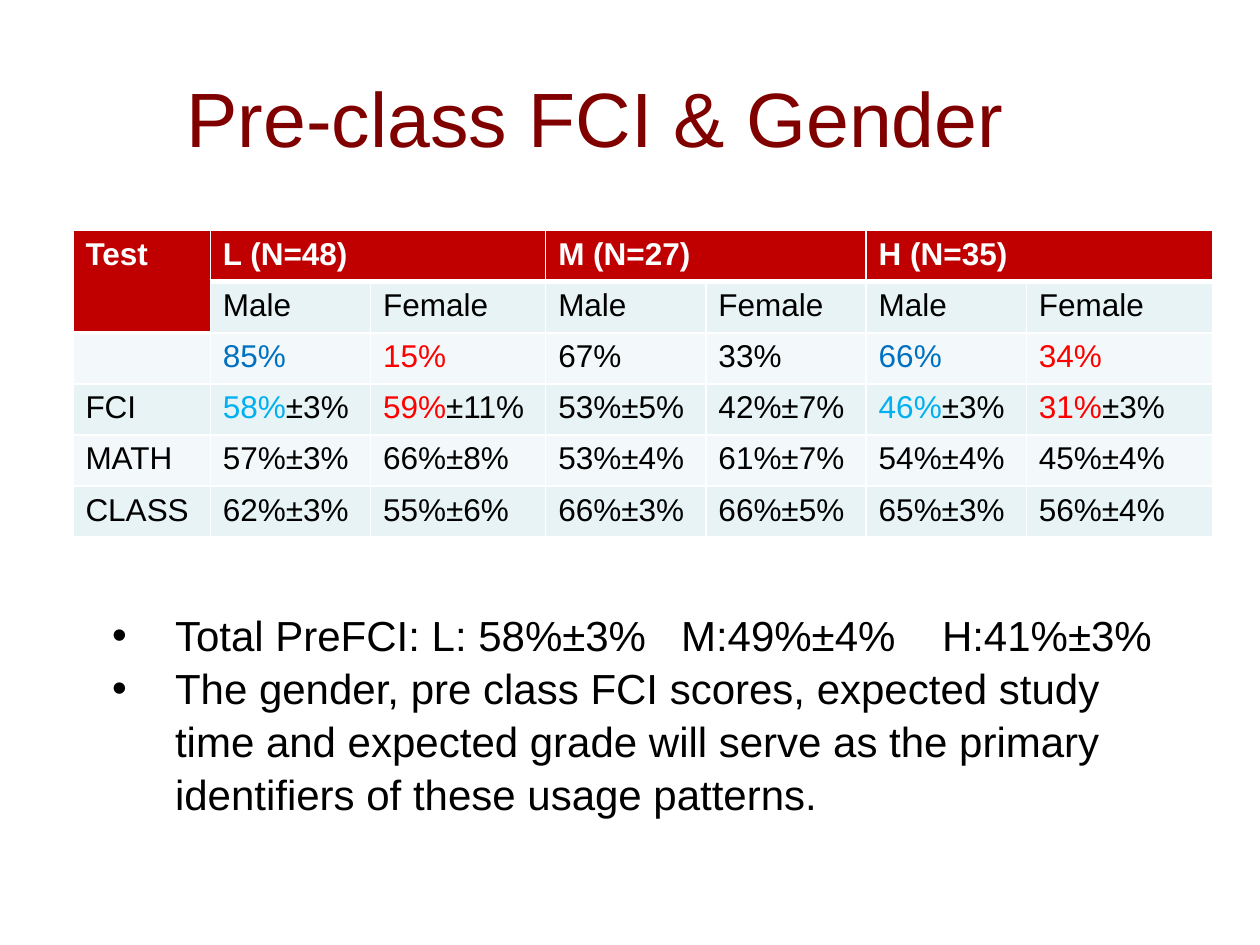
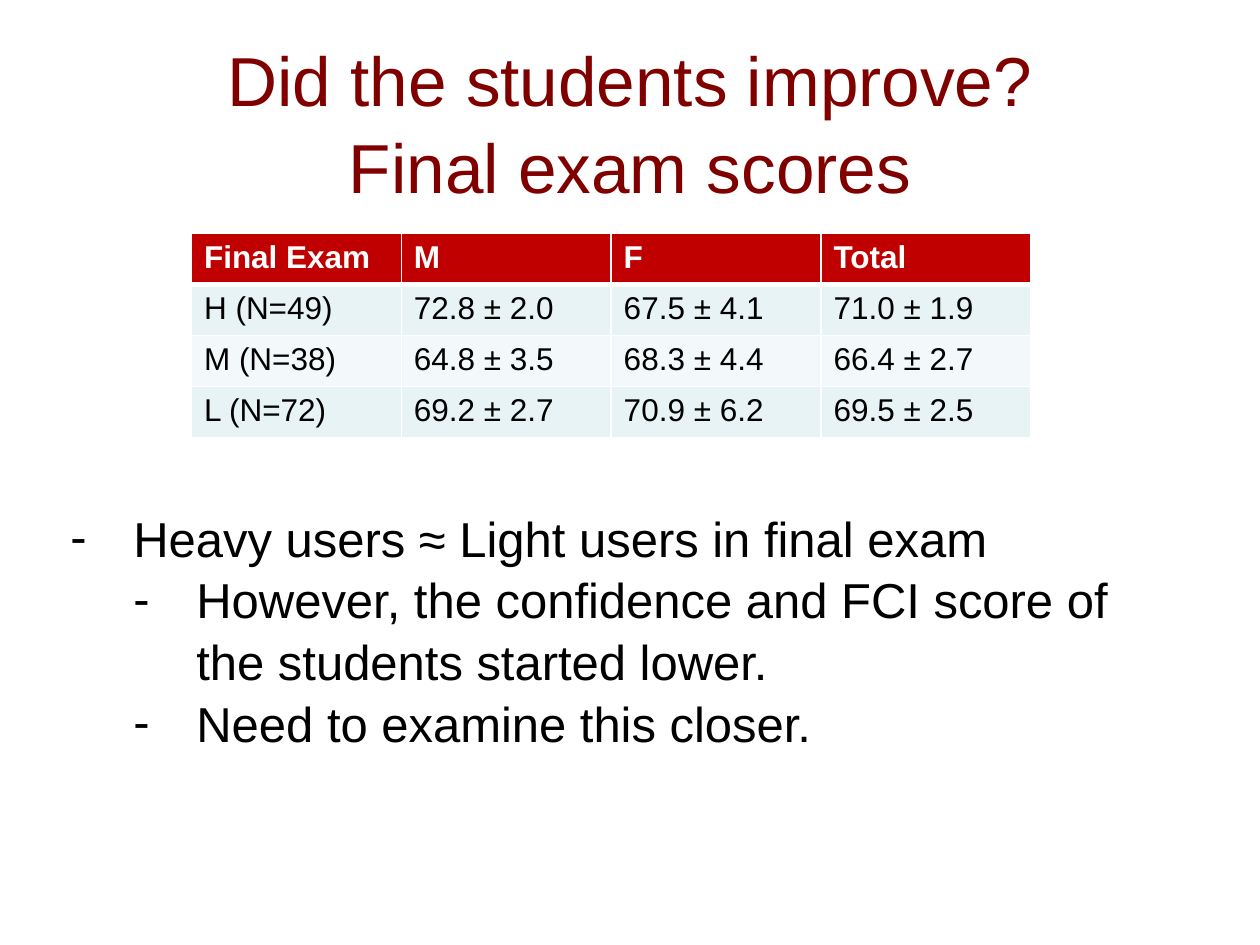
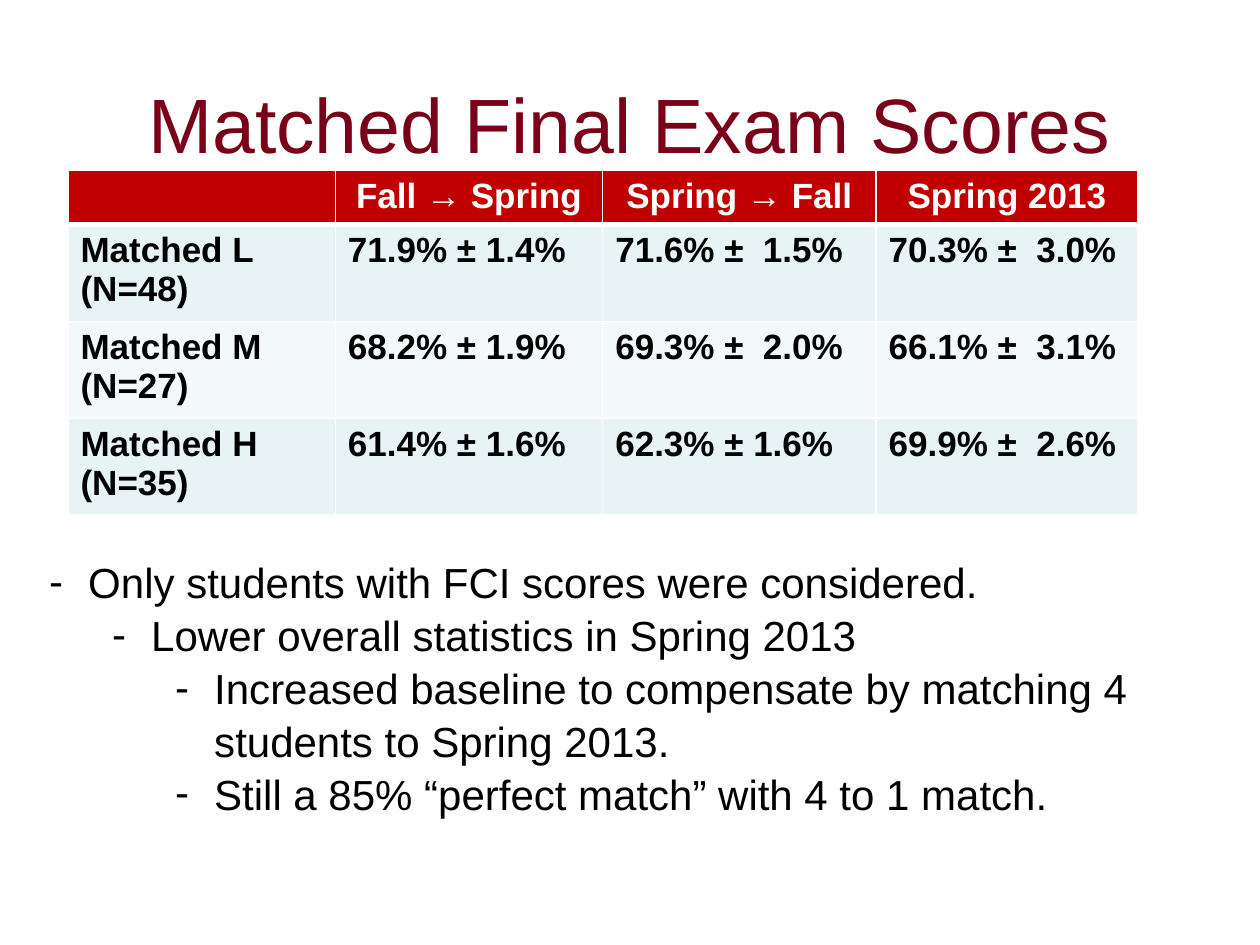
from lxml.etree import SubElement
from pptx import Presentation
from pptx.dml.color import RGBColor
from pptx.enum.text import MSO_ANCHOR, PP_ALIGN
from pptx.oxml.ns import qn
from pptx.util import Cm, Pt

FONT = "Arial"
BLACK, WHITE, MAROON = "000000", "FFFFFF", "800000"
HEADER_FILL = "C00000"
BAND_FILLS = ["F3F9FA", "E7F3F4"]
BLUE, LIGHT_BLUE, RED = "0070C0", "00B0F0", "FF0000"
LINE_SPACING = 1.05
HEADER_HEIGHT = 1.03
LEVEL_STEP = 1.27

# Boxes are (left, top, width, height) in centimetres.
TITLE_BOX = (1.9, 0.84, 21.6, 3.18)

SLIDES = [
    {
        "title": "Pre-class FCI & Gender",
        "title_box": (2.44, 0.71, 19.13, 3.18),
        "title_size": 44,
        "title_color": MAROON,
        "table_position": (1.47, 4.65),
        "columns": [2.77, 3.23, 3.53, 3.23, 3.23, 3.23, 3.76],
        "row_height": 1.03,
        "table_size": 18,
        "rows": [
            ["Test", "L (N=48)", "", "M (N=27)", "", "H (N=35)", ""],
            ["", "Male", "Female", "Male", "Female", "Male", "Female"],
            ["", "85%", "15%", "67%", "33%", "66%", "34%"],
            ["FCI", "58%±3%", "59%±11%", "53%±5%", "42%±7%", "46%±3%", "31%±3%"],
            ["MATH", "57%±3%", "66%±8%", "53%±4%", "61%±7%", "54%±4%", "45%±4%"],
            ["CLASS", "62%±3%", "55%±6%", "66%±3%", "66%±5%", "65%±3%", "56%±4%"],
        ],
        "merges": [((0, 0), (1, 0))] + [((0, c), (0, c + 1)) for c in (1, 3, 5)],
        "highlights": {
            (2, 1): BLUE, (2, 2): RED, (2, 5): BLUE, (2, 6): RED,
            (3, 1): LIGHT_BLUE, (3, 2): RED, (3, 5): LIGHT_BLUE, (3, 6): RED,
        },
        "bullet_box": (2.01, 12.12, 21.87, 4.37),
        "bullet_size": 24,
        "bullet_mark": "•",
        "hanging": 1.27,
        "bullets": [
            (0, "Total PreFCI: L: 58%±3%   M:49%±4%    H:41%±3%"),
            (0, "The gender, pre class FCI scores, expected study time and expected "
                "grade will serve as the primary identifiers of these usage patterns."),
        ],
    },
    {
        "title": "Did the students improve?\nFinal exam scores",
        "title_box": TITLE_BOX,
        "title_size": 39.6,
        "title_color": MAROON,
        "table_position": (3.86, 4.7),
        "columns": [4.23] * 4,
        "row_height": 1.03,
        "table_size": 18,
        "rows": [
            ["Final Exam", "M", "F", "Total"],
            ["H (N=49)", "72.8 ± 2.0", "67.5 ± 4.1", "71.0 ± 1.9"],
            ["M (N=38)", "64.8 ± 3.5", "68.3 ± 4.4", "66.4 ± 2.7"],
            ["L (N=72)", "69.2 ± 2.7", "70.9 ± 6.2", "69.5 ± 2.5"],
        ],
        "bullet_box": (1.17, 10.06, 21.79, 5.05),
        "bullet_size": 28,
        "bullet_mark": "-",
        "hanging": 1.27,
        "bullets": [
            (0, "Heavy users ≈ Light users in final exam"),
            (1, "However, the confidence and FCI score of the students started lower."),
            (1, "Need to examine this closer."),
        ],
    },
    {
        "title": "Matched Final Exam Scores",
        "title_box": TITLE_BOX,
        "title_size": 44,
        "title_color": "7A0019",
        "table_position": (1.37, 3.43),
        "columns": [5.39, 5.39, 5.51, 5.28],
        "row_height": 1.94,
        "table_size": 20,
        "bold_body": True,
        "header_alignment": PP_ALIGN.CENTER,
        "rows": [
            ["", "Fall → Spring", "Spring → Fall", "Spring 2013"],
            ["Matched L\n(N=48)", "71.9% ± 1.4%", "71.6% ±  1.5%", "70.3% ±  3.0%"],
            ["Matched M\n(N=27)", "68.2% ± 1.9%", "69.3% ±  2.0%", "66.1% ±  3.1%"],
            ["Matched H\n(N=35)", "61.4% ± 1.6%", "62.3% ± 1.6%", "69.9% ±  2.6%"],
        ],
        "bullet_box": (0.74, 11.05, 24.08, 5.38),
        "bullet_size": 24,
        "bullet_mark": "-",
        "hanging": 0.79,
        "bullets": [
            (0, "Only students with FCI scores were considered."),
            (1, "Lower overall statistics in Spring 2013"),
            (2, "Increased baseline to compensate by matching 4 students to Spring 2013."),
            (2, "Still a 85% “perfect match” with 4 to 1 match."),
        ],
    },
]


def format_runs(paragraph, size, color, bold=False):
    for run in paragraph.runs:
        run.font.name = FONT
        run.font.size = Pt(size)
        run.font.bold = bold
        run.font.color.rgb = RGBColor.from_string(color)


def add_cell_border(cell, side, width):
    line = SubElement(cell._tc.get_or_add_tcPr(), qn(f"a:ln{side}"), w=str(Pt(width)))
    fill = SubElement(line, qn("a:solidFill"))
    SubElement(fill, qn("a:srgbClr"), val=WHITE)


presentation = Presentation()
presentation.slide_width = Cm(25.4)
presentation.slide_height = Cm(19.05)

for content in SLIDES:
    slide = presentation.slides.add_slide(presentation.slide_layouts[6])

    # Title
    title = slide.shapes.add_textbox(*map(Cm, content["title_box"])).text_frame
    title.word_wrap = True
    title.vertical_anchor = MSO_ANCHOR.MIDDLE
    paragraph = title.paragraphs[0]
    paragraph.text = content["title"]
    paragraph.alignment = PP_ALIGN.CENTER
    paragraph.line_spacing = LINE_SPACING
    format_runs(paragraph, content["title_size"], content["title_color"])

    # Score table
    rows, columns = content["rows"], content["columns"]
    heights = [HEADER_HEIGHT] + [content["row_height"]] * (len(rows) - 1)
    left, top = content["table_position"]
    table = slide.shapes.add_table(
        len(rows), len(columns), Cm(left), Cm(top), Cm(sum(columns)), Cm(sum(heights))
    ).table
    table.horz_banding = False
    for column, width in zip(table.columns, columns):
        column.width = Cm(width)
    for row, height in zip(table.rows, heights):
        row.height = Cm(height)
    for first, last in content.get("merges", []):
        table.cell(*first).merge(table.cell(*last))

    for row_index, row in enumerate(rows):
        for column_index, text in enumerate(row):
            cell = table.cell(row_index, column_index)
            is_header = row_index == 0
            for side, width in (("L", 1), ("R", 1), ("B", 3 if is_header else 1)):
                add_cell_border(cell, side, width)
            cell.fill.solid()
            fill = HEADER_FILL if is_header else BAND_FILLS[row_index % 2]
            cell.fill.fore_color.rgb = RGBColor.from_string(fill)
            if not text:
                continue
            highlight = content.get("highlights", {}).get((row_index, column_index))
            if highlight:
                score, sign, error = text.partition("±")
                cell.text_frame.text = score
                if error:
                    cell.text_frame.paragraphs[0].add_run().text = sign + error
            else:
                cell.text_frame.text = text
            for paragraph in cell.text_frame.paragraphs:
                if is_header:
                    paragraph.alignment = content.get("header_alignment")
                format_runs(paragraph, content["table_size"], WHITE if is_header else BLACK,
                            is_header or content.get("bold_body", False))
            if highlight:
                score_run = cell.text_frame.paragraphs[0].runs[0]
                score_run.font.color.rgb = RGBColor.from_string(highlight)

    # Bullets
    body = slide.shapes.add_textbox(*map(Cm, content["bullet_box"])).text_frame
    body.word_wrap = True
    for index, (level, text) in enumerate(content["bullets"]):
        paragraph = body.add_paragraph() if index else body.paragraphs[0]
        paragraph.text = text
        paragraph.level = level
        properties = paragraph._p.get_or_add_pPr()
        properties.set("marL", str(Cm(content["hanging"] + level * LEVEL_STEP)))
        properties.set("indent", str(-Cm(content["hanging"])))
        SubElement(properties, qn("a:buFont"), typeface=FONT)
        SubElement(properties, qn("a:buChar"), char=content["bullet_mark"])
        paragraph.line_spacing = LINE_SPACING
        format_runs(paragraph, content["bullet_size"], BLACK)

presentation.save("out.pptx")
